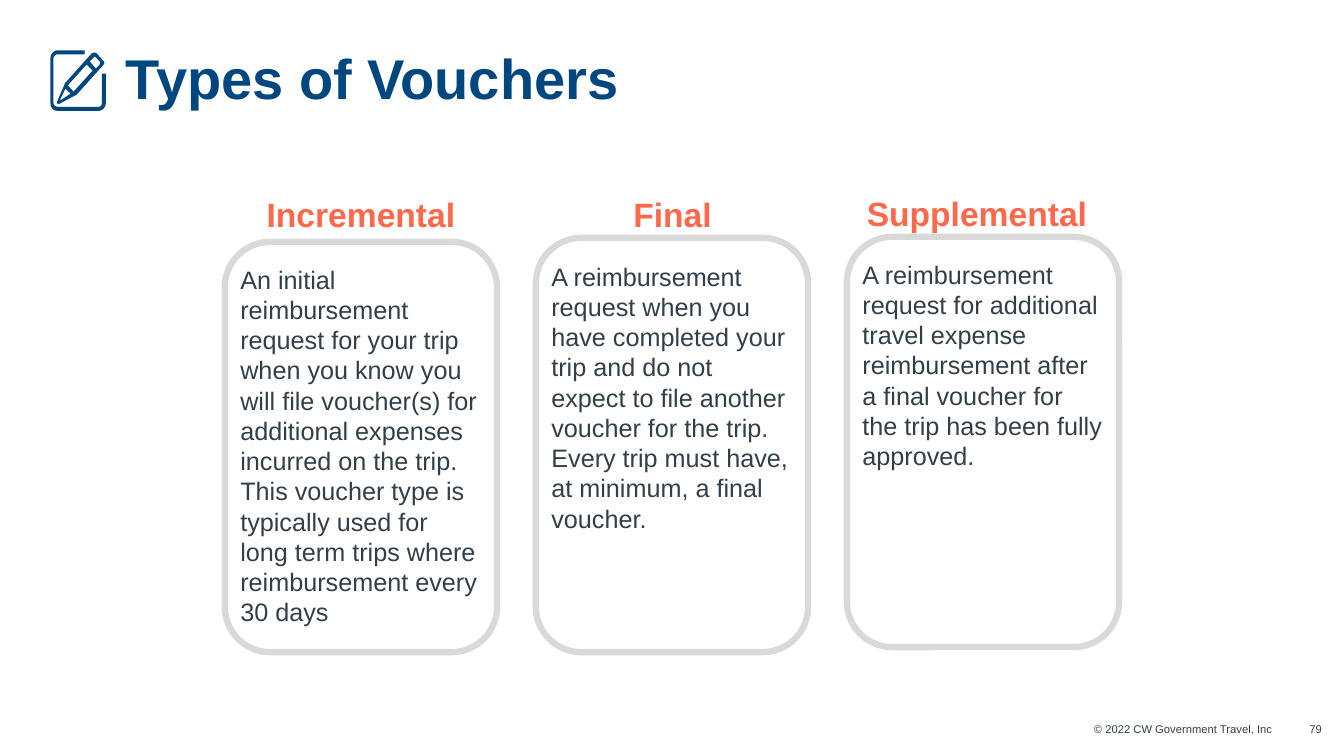
from pptx import Presentation
from pptx.dml.color import RGBColor
from pptx.enum.shapes import MSO_SHAPE
from pptx.enum.text import MSO_ANCHOR, PP_ALIGN
from pptx.util import Inches, Pt

NAVY = RGBColor(0x00, 0x46, 0x7F)
CORAL = RGBColor(0xFF, 0x69, 0x4B)
SLATE = RGBColor(0x33, 0x3F, 0x48)
GREY = RGBColor(0xD9, 0xD9, 0xD9)

# Content
TITLE = "Types of Vouchers"
COPYRIGHT = "© 2022 CW Government Travel, Inc"
PAGE_NUMBER = "79"

# Heading, heading place, card top and height, body top and height, body text
VOUCHERS = [
    ("Incremental", (2.41, 1.87, 2.34), (2.4, 4.07), (2.57, 3.74),
     "An initial reimbursement request for your trip when you know you will "
     "file voucher(s) for additional expenses incurred on the trip. This "
     "voucher type is typically used for long term trips where "
     "reimbursement every 30 days"),
    ("Final", (5.5, 1.87, 2.34), (2.36, 4.11), (2.54, 2.83),
     "A reimbursement request when you have completed your trip and do not "
     "expect to file another voucher for the trip. Every trip must have, at "
     "minimum, a final voucher."),
    ("Supplemental", (8.46, 1.86, 2.46), (2.35, 4.07), (2.52, 2.22),
     "A reimbursement request for additional travel expense reimbursement "
     "after a final voucher for the trip has been fully approved."),
]
CARD_LEFT, CARD_STEP, CARD_WIDTH = 2.23, 3.085, 2.7
BODY_INSET, BODY_WIDTH = 0.055, 2.59

# Icon outlines: two numbers are a line, six are a Bézier curve
ICON = [
    [(1.01, 0.73), (1.01, 1.02), (1.01, 1.04, 1, 1.06, 0.98, 1.06),
     (0.57, 1.06), (0.55, 1.06, 0.53, 1.04, 0.53, 1.02), (0.53, 0.58),
     (0.53, 0.56, 0.55, 0.54, 0.57, 0.54), (0.84, 0.54), (0.84, 0.5),
     (0.57, 0.5), (0.53, 0.5, 0.5, 0.54, 0.5, 0.58), (0.5, 1.02),
     (0.5, 1.07, 0.53, 1.1, 0.57, 1.1), (0.98, 1.1),
     (1.01, 1.1, 1.05, 1.07, 1.05, 1.02), (1.05, 0.73)],
    [(0.64, 0.84), (0.57, 1), (0.56, 1.02, 0.57, 1.04, 0.59, 1.03),
     (0.74, 0.95), (0.75, 0.95, 0.75, 0.94, 0.76, 0.94), (1.02, 0.65),
     (1.04, 0.63, 1.04, 0.61, 1.02, 0.6), (0.96, 0.53),
     (0.95, 0.52, 0.93, 0.52, 0.91, 0.53), (0.65, 0.82),
     (0.64, 0.82, 0.64, 0.83, 0.64, 0.84)],
    [(0.93, 0.57), (0.93, 0.56, 0.94, 0.56, 0.95, 0.57), (0.99, 0.61),
     (0.99, 0.62, 0.99, 0.63, 0.99, 0.64), (0.95, 0.68), (0.89, 0.61)],
    [(0.86, 0.64), (0.92, 0.7), (0.73, 0.91),
     (0.71, 0.89, 0.68, 0.85, 0.67, 0.85)],
    [(0.7, 0.93), (0.61, 0.99), (0.6, 1, 0.6, 0.99, 0.6, 0.98),
     (0.65, 0.88)],
]
CURVE_STEPS = 6


def outline_points(segments):
    """Turn lines and curves into a list of points in EMU."""
    points = [segments[0]]
    for segment in segments[1:]:
        if len(segment) == 2:
            points.append(segment)
            continue
        start, first, second, end = points[-1], segment[:2], segment[2:4], segment[4:]
        for step in range(1, CURVE_STEPS + 1):
            t = step / CURVE_STEPS
            u = 1 - t
            points.append(tuple(
                u**3 * a + 3 * u * u * t * b + 3 * u * t * t * c + t**3 * d
                for a, b, c, d in zip(start, first, second, end)))
    return [(Inches(x), Inches(y)) for x, y in points]


def add_icon(page):
    outlines = [outline_points(segments) for segments in ICON]
    builder = page.shapes.build_freeform(*outlines[0][0])
    for index, points in enumerate(outlines):
        if index:
            builder.move_to(*points[0])
        builder.add_line_segments(points[1:], close=True)
    icon = builder.convert_to_shape()
    icon.shadow.inherit = False
    icon.fill.solid()
    icon.fill.fore_color.rgb = NAVY
    icon.line.fill.background()


def add_text(page, text, place, size, color, bold=False,
             align=PP_ALIGN.LEFT, inset=True, line_spacing=None):
    box = page.shapes.add_textbox(*map(Inches, place))
    frame = box.text_frame
    frame.word_wrap = True
    frame.vertical_anchor = MSO_ANCHOR.TOP
    if not inset:
        for side in ("left", "top", "right", "bottom"):
            setattr(frame, f"margin_{side}", 0)
    para = frame.paragraphs[0]
    para.alignment = align
    para.line_spacing = line_spacing
    span = para.add_run()
    span.text = text
    for name, value in {"name": "Arial", "size": Pt(size), "bold": bold}.items():
        setattr(span.font, name, value)
    span.font.color.rgb = color


def add_card(page, left, top, height):
    card = page.shapes.add_shape(
        MSO_SHAPE.ROUNDED_RECTANGLE,
        *map(Inches, (left, top, CARD_WIDTH, height)))
    card.shadow.inherit = False
    card.fill.background()
    card.line.color.rgb = GREY
    card.line.width = Pt(4.5)


def main():
    deck = Presentation()
    deck.slide_width, deck.slide_height = Inches(13.33), Inches(7.5)
    page = deck.slides.add_slide(deck.slide_layouts[6])

    # Title
    add_icon(page)
    add_text(page, TITLE, (1.25, 0.53, 11.53, 0.92), 40, NAVY, bold=True,
             inset=False, line_spacing=0.85)

    # Voucher cards
    for index, (heading, heading_place, card, body, text) in enumerate(VOUCHERS):
        left = CARD_LEFT + index * CARD_STEP
        add_card(page, left, *card)
        add_text(page, heading, (*heading_place, 0.5), 24, CORAL, bold=True,
                 align=PP_ALIGN.CENTER)
        add_text(page, text, (left + BODY_INSET, body[0], BODY_WIDTH, body[1]),
                 18, SLATE)

    # Footer
    for text, left, width in ((COPYRIGHT, 8.38, 4.24), (PAGE_NUMBER, 12.88, 0.23)):
        add_text(page, text, (left, 7.17, width, 0.14), 8, SLATE,
                 align=PP_ALIGN.RIGHT, inset=False)

    deck.save("out.pptx")


if __name__ == "__main__":
    main()
